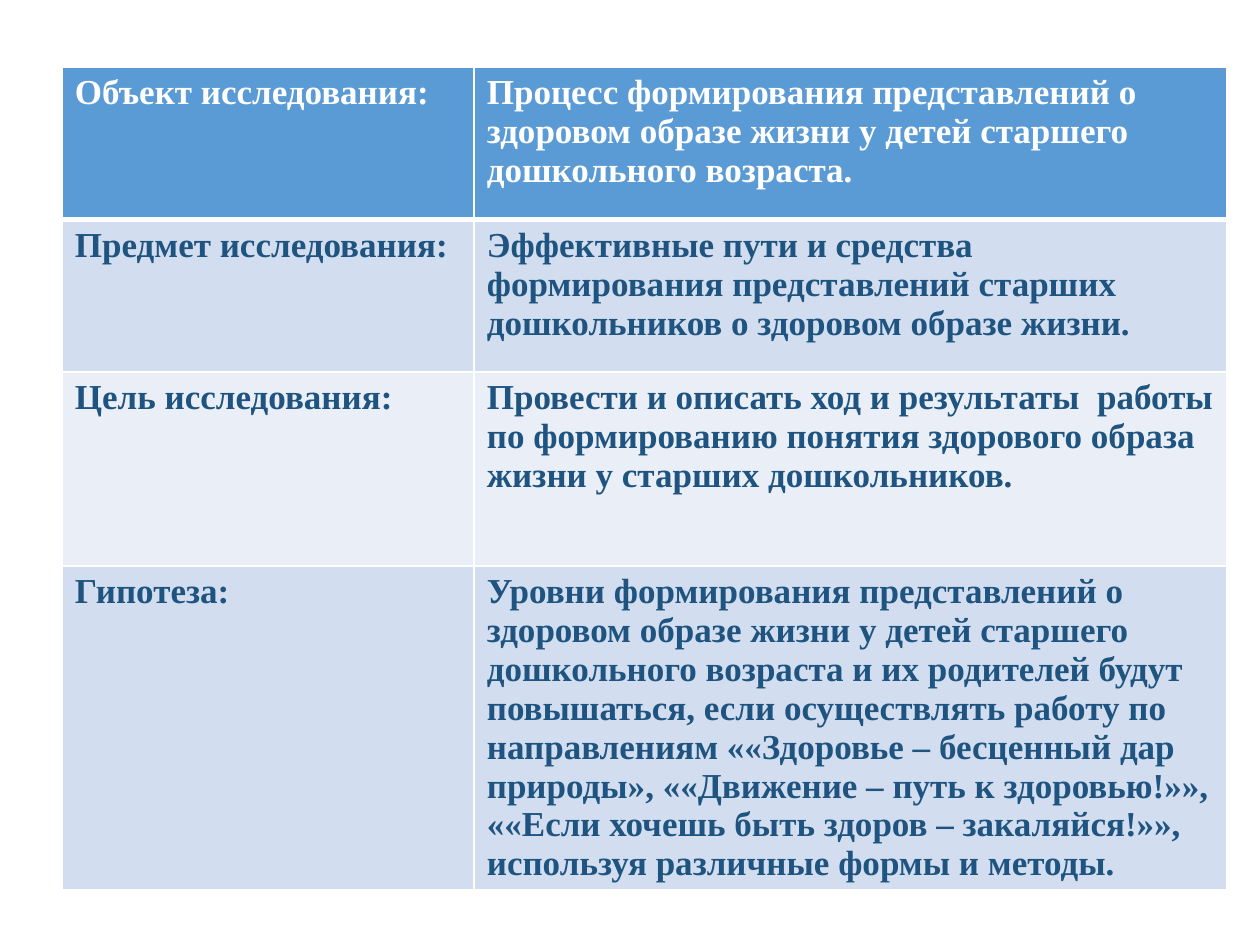
from lxml.etree import SubElement
from pptx import Presentation
from pptx.dml.color import RGBColor as RGB
from pptx.oxml.ns import qn
from pptx.util import Pt

COLORS = {"header": "5B9BD5", "odd": "D2DEEF", "even": "EAEFF7",
          "text": "1F5480", "white": "FFFFFF"}
COL_WIDTHS = [235.4, 429.8]
ROW_HEIGHTS = [87.1, 87.1, 110.9, 184.4]
ROWS = [
    ("Объект исследования:",
     "Процесс формирования представлений о здоровом образе жизни "
     "у детей старшего дошкольного возраста."),
    ("Предмет исследования:",
     "Эффективные пути и средства формирования представлений "
     "старших дошкольников о здоровом образе жизни."),
    ("Цель исследования:",
     "Провести и описать ход и результаты  работы по формированию "
     "понятия здорового образа жизни у старших дошкольников."),
    ("Гипотеза:",
     "Уровни формирования представлений о здоровом образе жизни у детей "
     "старшего дошкольного возраста и их родителей будут повышаться, если "
     "осуществлять работу по направлениям ««Здоровье – бесценный дар "
     "природы», ««Движение – путь к здоровью!»», ««Если хочешь "
     "быть здоров – закаляйся!»», используя различные формы и методы."),
]


def write(tf, text, size=20, color="text", bold=True, font="Times New Roman"):
    r = tf.paragraphs[0].add_run()
    r.text = text
    r.font.name, r.font.size, r.font.bold = font, Pt(size), bold
    r.font.color.rgb = RGB.from_string(COLORS[color])


def set_borders(cell, **widths):
    """Draw white borders; widths in points are keyed by side (L, R, T, B)."""
    tc_pr = cell._tc.get_or_add_tcPr()
    for side, width in widths.items():
        ln = SubElement(tc_pr, qn(f"a:ln{side}"), w=str(Pt(width)))
        fill = SubElement(ln, qn("a:solidFill"))
        SubElement(fill, qn("a:srgbClr"), val=COLORS["white"])


prs = Presentation()
prs.slide_width, prs.slide_height = Pt(720), Pt(540)
s = prs.slides.add_slide(prs.slide_layouts[6])

table = s.shapes.add_table(len(ROWS), len(COL_WIDTHS), Pt(35.6), Pt(38.5),
                           Pt(sum(COL_WIDTHS)), Pt(sum(ROW_HEIGHTS))).table
for col, width in zip(table.columns, COL_WIDTHS):
    col.width = Pt(width)
for row, height in zip(table.rows, ROW_HEIGHTS):
    row.height = Pt(height)

for i, texts in enumerate(ROWS):
    band = "header" if i == 0 else "odd" if i % 2 else "even"
    for j, text in enumerate(texts):
        cell = table.cell(i, j)
        set_borders(cell, L=1, R=1, T=3 if i == 1 else 1, B=3 if i == 0 else 1)
        cell.fill.solid()
        cell.fill.fore_color.rgb = RGB.from_string(COLORS[band])
        write(cell.text_frame, text, color="white" if i == 0 else "text")

prs.save("out.pptx")
